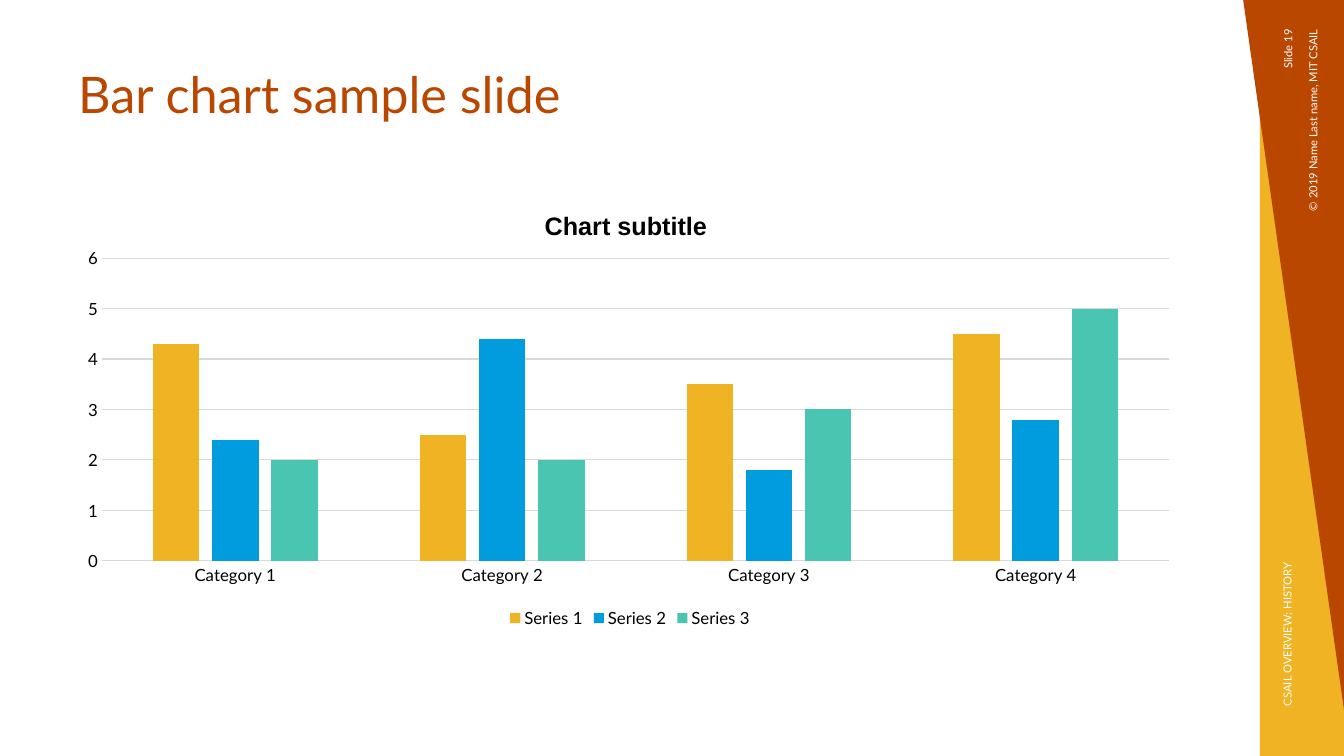
from lxml import etree
from pptx import Presentation
from pptx import util as u
from pptx.chart.data import CategoryChartData
from pptx.dml.color import RGBColor
from pptx.enum import chart as charts, shapes, text
from pptx.oxml.ns import qn

PX = 9525
COLORS = {
    "gold": "F0B323",
    "rust": "B94700",
    "blue": "009CDE",
    "teal": "49C5B1",
    "grid": "D9D9D9",
    "black": "000000",
    "white": "FFFFFF",
}


def px(*lengths):
    return [u.Emu(length * PX) for length in lengths]


def rgb(name):
    return RGBColor.from_string(COLORS[name])


def set_font(font, size, color, name="Lato", bold=False):
    font.name = name
    font.size = u.Pt(size)
    font.bold = bold
    font.color.rgb = rgb(color)


def set_layout(parent, index, **fractions):
    for old in parent.findall(qn("c:layout")):
        parent.remove(old)
    layout = etree.Element(qn("c:layout"))
    manual = etree.SubElement(layout, qn("c:manualLayout"))
    if "w" in fractions:
        etree.SubElement(manual, qn("c:layoutTarget"), val="inner")
    for mode in ("xMode", "yMode"):
        etree.SubElement(manual, qn("c:" + mode), val="edge")
    for key, fraction in fractions.items():
        etree.SubElement(manual, qn("c:" + key), val=str(fraction))
    parent.insert(index, layout)


class SlideBuilder:
    def __init__(self, presentation):
        self.slide = presentation.slides.add_slide(presentation.slide_layouts[6])

    def paint(self, shape, color):
        shape.shadow.inherit = False
        shape.fill.solid()
        shape.fill.fore_color.rgb = rgb(color)
        shape.line.fill.background()

    def rectangle(self, box, color):
        shape = self.slide.shapes.add_shape(shapes.MSO_SHAPE.RECTANGLE, *px(*box))
        self.paint(shape, color)

    def polygon(self, points, color):
        builder = self.slide.shapes.build_freeform(*points[0], scale=PX)
        builder.add_line_segments(points[1:], close=True)
        self.paint(builder.convert_to_shape(), color)

    def label(self, box, words, size=8, color="white", rotation=270,
              anchor=text.MSO_ANCHOR.MIDDLE, align=text.PP_ALIGN.LEFT, spacing=1.0):
        shape = self.slide.shapes.add_textbox(*px(*box))
        shape.rotation = rotation
        frame = shape.text_frame
        frame.word_wrap = True
        frame.vertical_anchor = anchor
        frame.text = words
        paragraph = frame.paragraphs[0]
        paragraph.alignment = align
        paragraph.line_spacing = spacing
        set_font(paragraph.runs[0].font, size, color)

    def column_chart(self, box, title, categories, series):
        data = CategoryChartData(number_format="General")
        data.categories = categories
        for name, values, color in series:
            data.add_series(name, values)
        chart = self.slide.shapes.add_chart(
            charts.XL_CHART_TYPE.COLUMN_CLUSTERED, *px(*box), data).chart
        set_font(chart.font, 10, "black")

        chart.has_title = True
        frame = chart.chart_title.text_frame
        frame.text = title
        set_font(frame.paragraphs[0].runs[0].font, 18, "black", "Arial", True)
        chart.chart_title.include_in_layout = False
        set_layout(frame.paragraphs[0]._p.getparent().getparent().getparent(), 1,
                   x=0.42, y=0.04)

        chart.has_legend = True
        chart.legend.position = charts.XL_LEGEND_POSITION.BOTTOM
        chart.legend.include_in_layout = False
        set_font(chart.legend.font, 12, "black")

        plot = chart.plots[0]
        plot.gap_width, plot.overlap = 219, -27
        plot.vary_by_categories = False
        for bars, (name, values, color) in zip(plot.series, series):
            bars.format.fill.solid()
            bars.format.fill.fore_color.rgb = rgb(color)
            bars.invert_if_negative = False

        category_axis, value_axis = chart.category_axis, chart.value_axis
        for axis in (category_axis, value_axis):
            axis.major_tick_mark = axis.minor_tick_mark = charts.XL_TICK_MARK.NONE
            set_font(axis.tick_labels.font, 12, "black")
        value_axis.minimum_scale, value_axis.maximum_scale = 0, 6
        value_axis.major_unit = 1
        value_axis.has_major_gridlines = True
        value_axis.format.line.fill.background()
        for line in (category_axis.format.line, value_axis.major_gridlines.format.line):
            line.color.rgb = rgb("grid")
            line.width = u.Pt(0.75)
        set_layout(chart._chartSpace.chart.plotArea, 0, x=0.03, y=0.16, w=0.95, h=0.68)


def main():
    presentation = Presentation()
    presentation.slide_width, presentation.slide_height = px(1280, 720)
    builder = SlideBuilder(presentation)

    builder.rectangle((1200, 0, 80, 720), "gold")
    builder.polygon([(1184, 0), (1280, 676), (1280, 0)], "rust")
    builder.column_chart(
        (65, 178, 1070, 424),
        "Chart subtitle",
        [f"Category {number}" for number in range(1, 5)],
        [
            ("Series 1", (4.3, 2.5, 3.5, 4.5), "gold"),
            ("Series 2", (2.4, 4.4, 1.8, 2.8), "blue"),
            ("Series 3", (2, 2, 3, 5), "teal"),
        ],
    )
    builder.label((65, 62, 1070, 93), "Bar chart sample slide", size=36, color="rust",
                  rotation=0, anchor=text.MSO_ANCHOR.TOP, spacing=0.9)
    builder.label((1082, 521, 288, 34), "CSAIL OVERVIEW: HISTORY")
    builder.label((1133, 119, 235, 34), "© 2019 Name Last name, MIT CSAIL",
                  align=text.PP_ALIGN.RIGHT)
    builder.label((1156, 72, 141, 34), "Slide 19", align=text.PP_ALIGN.RIGHT)

    presentation.save("out.pptx")


if __name__ == "__main__":
    main()
